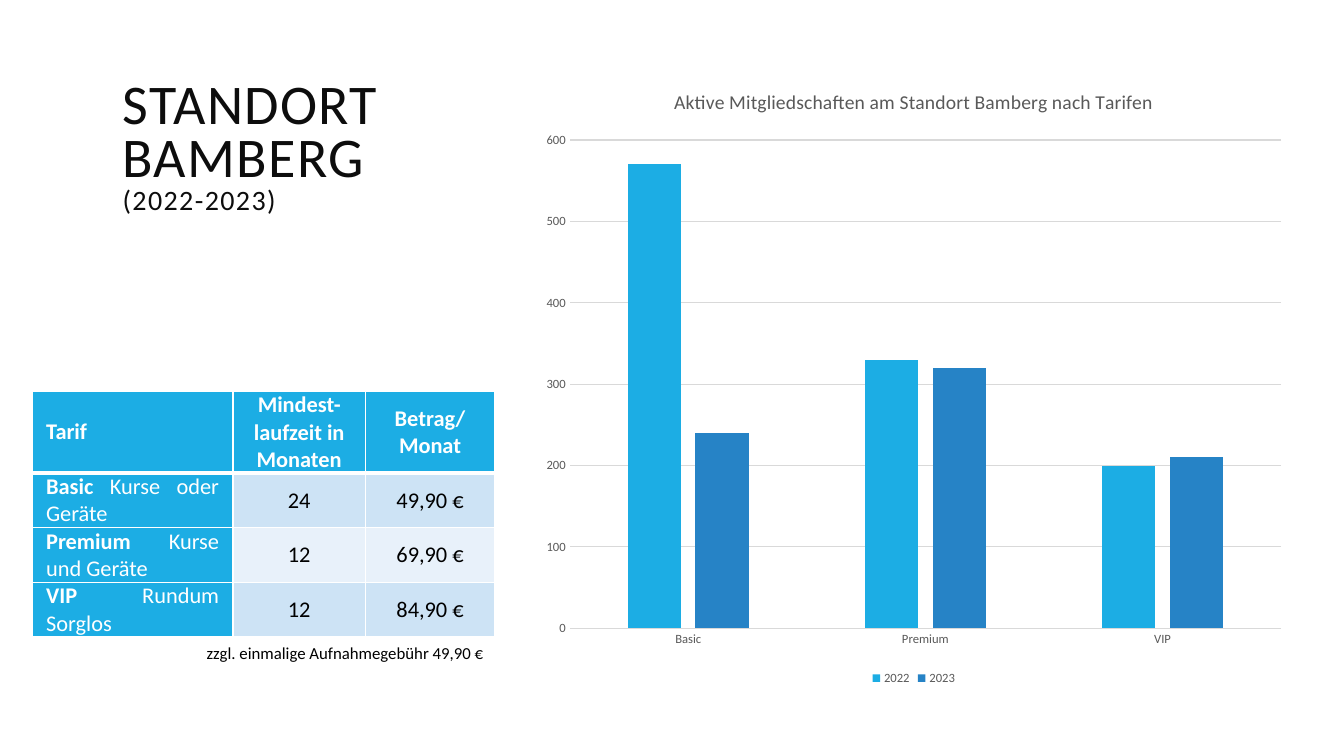
from lxml.etree import SubElement
from pptx import Presentation
from pptx.chart.data import CategoryChartData
from pptx.dml.color import RGBColor
from pptx.enum.chart import XL_CHART_TYPE, XL_LEGEND_POSITION, XL_TICK_MARK
from pptx.enum.text import MSO_ANCHOR, PP_ALIGN
from pptx.oxml.ns import qn
from pptx.util import Pt

FONT = "Calibri"
COLORS = {
    "sky": "1CADE4", "blue": "2683C6", "band": "CDE3F5", "pale": "E8F1FA",
    "white": "FFFFFF", "black": "000000", "ink": "0D0D0D",
    "gray": "595959", "grid": "D9D9D9",
}
HEADS = ["Tarif", "Mindest-laufzeit in Monaten", "Betrag/\nMonat"]
RATES = [
    ("Basic", "Kurse oder Geräte", "24", "49,90 €"),
    ("Premium", "Kurse und Geräte", "12", "69,90 €"),
    ("VIP", "Rundum Sorglos", "12", "84,90 €"),
]
MEMBERS = {"2022": (570, 330, 200), "2023": (240, 320, 210)}


def rgb(name):
    return RGBColor.from_string(COLORS[name])


def style(font, size, color, bold=False):
    font.name = FONT
    font.size = Pt(size)
    font.bold = bold
    font.color.rgb = rgb(color)


def write(para, text, size=16, color="black", bold=False, align=None, gap=None):
    """Add text to a paragraph; gap is the letter spacing in points."""
    if align is not None:
        para.alignment = align
    for i, line in enumerate(text.split("\n")):
        if i:
            para.add_line_break()
        run = para.add_run()
        run.text = line
        style(run.font, size, color, bold)
        if gap:
            run.font._element.set("spc", str(gap * 100))


def add_text(slide, left, top, width, height, inset, anchor, lead):
    """Add a text box and return its first paragraph."""
    frame = slide.shapes.add_textbox(Pt(left), Pt(top), Pt(width), Pt(height)).text_frame
    frame.word_wrap = True
    frame.vertical_anchor = anchor
    frame.margin_left = frame.margin_right = Pt(inset)
    frame.margin_top = frame.margin_bottom = Pt(3.6)
    para = frame.paragraphs[0]
    para.line_spacing = lead
    return para


def edge(cell, **widths):
    props = cell._tc.get_or_add_tcPr()
    for side in "LRTB":
        line = SubElement(props, qn(f"a:ln{side}"), w=str(Pt(widths.get(side, 1))))
        fill = SubElement(line, qn("a:solidFill"))
        SubElement(fill, qn("a:srgbClr"), val=COLORS["white"])


def dress(cell, fill, **widths):
    """Set borders, fill and insets, and return the first paragraph."""
    edge(cell, **widths)
    cell.fill.solid()
    cell.fill.fore_color.rgb = rgb(fill)
    cell.vertical_anchor = MSO_ANCHOR.MIDDLE
    cell.margin_left = cell.margin_right = Pt(10)
    cell.margin_top = cell.margin_bottom = 0
    return cell.text_frame.paragraphs[0]


def add_rates(slide):
    cols, rows = [143.5, 94.5, 92.5], [58.5, 39, 39, 39]
    table = slide.shapes.add_table(
        len(rows), len(cols), Pt(23), Pt(279.5), Pt(sum(cols)), Pt(sum(rows))).table
    for col, width in zip(table.columns, cols):
        col.width = Pt(width)
    for row, height in zip(table.rows, rows):
        row.height = Pt(height)
    for c, head in enumerate(HEADS):
        para = dress(table.cell(0, c), "sky", B=3)
        write(para, head, color="white", bold=True,
              align=PP_ALIGN.CENTER if c else PP_ALIGN.JUSTIFY)
    for r, (name, scope, *values) in enumerate(RATES, 1):
        top = 3 if r == 1 else 1
        para = dress(table.cell(r, 0), "sky", T=top)
        write(para, name + " ", color="white", bold=True, align=PP_ALIGN.JUSTIFY)
        write(para, scope, color="white")
        for c, value in enumerate(values, 1):
            para = dress(table.cell(r, c), "band" if r % 2 else "pale", T=top)
            write(para, value, align=PP_ALIGN.CENTER)


def rule(line):
    line.color.rgb = rgb("grid")
    line.width = Pt(0.75)


def add_bars(slide):
    data = CategoryChartData()
    data.categories = [rate[0] for rate in RATES]
    for year, counts in MEMBERS.items():
        data.add_series(year, counts)
    chart = slide.shapes.add_chart(
        XL_CHART_TYPE.COLUMN_CLUSTERED, Pt(379.5), Pt(47.5), Pt(546.5), Pt(445), data).chart
    style(chart.font, 10, "black")
    chart.has_title = True
    write(chart.chart_title.text_frame.paragraphs[0],
          "Aktive Mitgliedschaften am Standort Bamberg nach Tarifen", size=14, color="gray")
    chart.chart_title.include_in_layout = False
    chart.has_legend = True
    chart.legend.position = XL_LEGEND_POSITION.BOTTOM
    chart.legend.include_in_layout = False
    style(chart.legend.font, 9, "gray")

    plot = chart.plots[0]
    plot.gap_width, plot.overlap = 219, -27
    plot.vary_by_categories = False
    for bars, color in zip(plot.series, ("sky", "blue")):
        bars.format.fill.solid()
        bars.format.fill.fore_color.rgb = rgb(color)
        bars.invert_if_negative = False

    for axis in (chart.category_axis, chart.value_axis):
        axis.major_tick_mark = axis.minor_tick_mark = XL_TICK_MARK.NONE
        style(axis.tick_labels.font, 9, "gray")
    rule(chart.category_axis.format.line)
    scale = chart.value_axis
    scale.minimum_scale, scale.maximum_scale, scale.major_unit = 0, 600, 100
    scale.format.line.fill.background()
    scale.has_major_gridlines = True
    rule(scale.major_gridlines.format.line)


def main():
    deck = Presentation()
    deck.slide_width, deck.slide_height = Pt(960), Pt(540)
    slide = deck.slides.add_slide(deck.slide_layouts[6])

    title = add_text(slide, 80.5, 37.5, 299, 137, 7.2, MSO_ANCHOR.MIDDLE, 0.8)
    write(title, "STANDORT BAMBERG\n", size=40, color="ink", gap=1)
    write(title, "(2022-2023)", size=20, color="ink", gap=1)
    add_bars(slide)
    add_rates(slide)
    note = add_text(slide, 144, 457, 276.5, 39.5, 3.6, MSO_ANCHOR.TOP, 0.9)
    note.space_after = Pt(6)
    write(note, "zzgl. einmalige Aufnahmegebühr 49,90 €", size=12)
    deck.save("out.pptx")


if __name__ == "__main__":
    main()
